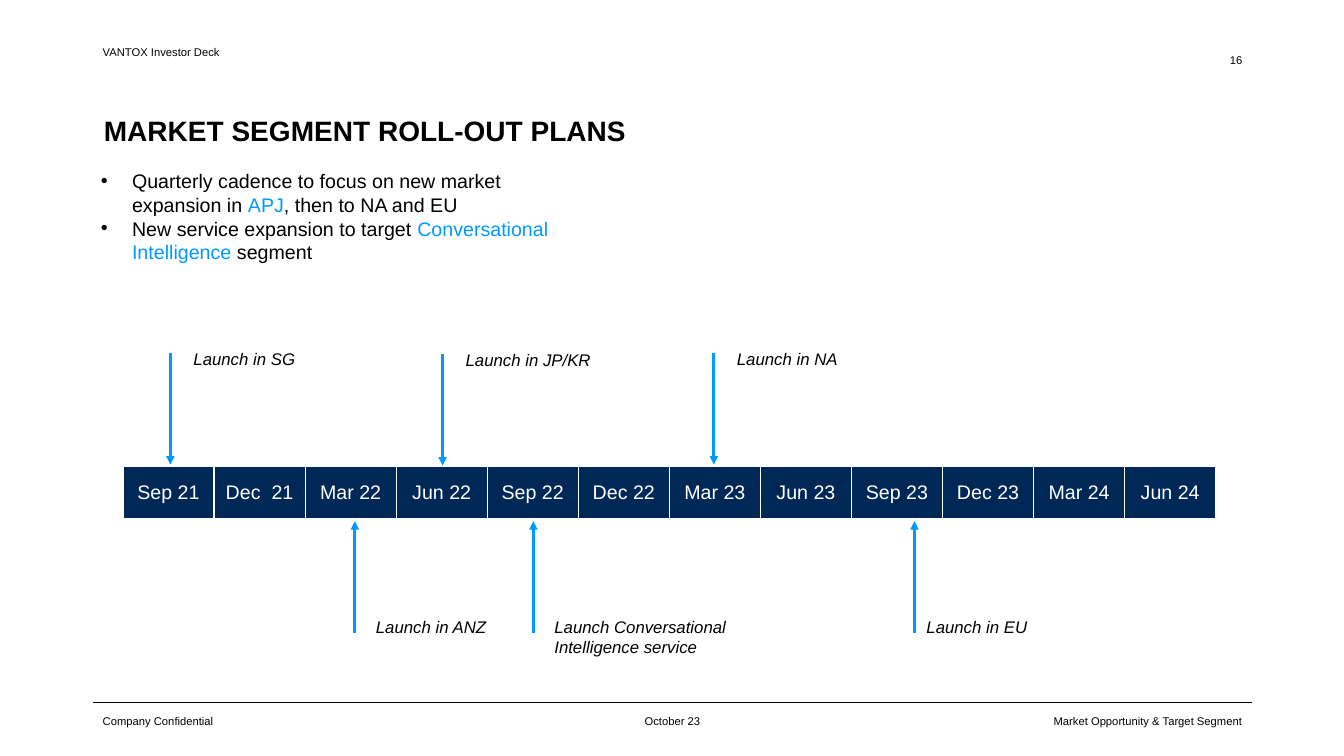
from lxml import etree
from pptx import Presentation
from pptx.dml.color import RGBColor
from pptx.enum.shapes import MSO_CONNECTOR
from pptx.enum.text import MSO_ANCHOR, MSO_AUTO_SIZE, PP_ALIGN
from pptx.oxml.ns import qn
from pptx.util import Inches, Pt

STRAIGHT = MSO_CONNECTOR.STRAIGHT
TOP, MIDDLE = MSO_ANCHOR.TOP, MSO_ANCHOR.MIDDLE
LEFT, CENTER, RIGHT = PP_ALIGN.LEFT, PP_ALIGN.CENTER, PP_ALIGN.RIGHT
COLORS = {"black": "000000", "white": "FFFFFF", "navy": "002856", "blue": "0099FF"}

deck = Presentation()
deck.slide_width, deck.slide_height = Inches(13.33), Inches(7.5)
page = deck.slides.add_slide(deck.slide_layouts[1])


def style_span(span, size, color="black", bold=False, italic=False):
    span.font.name = "Arial"
    span.font.size = Pt(size)
    span.font.bold = bold
    span.font.italic = italic
    span.font.color.rgb = RGBColor.from_string(COLORS[color])


def add_line(x1, y1, x2, y2, color, width):
    line = page.shapes.add_connector(STRAIGHT, Inches(x1), Inches(y1), Inches(x2), Inches(y2))
    line.line.color.rgb = RGBColor.from_string(COLORS[color])
    line.line.width = Pt(width)
    etree.SubElement(line._element.spPr, qn("a:effectLst"))
    return line


title = page.shapes.title
title.left, title.top, title.width, title.height = [Inches(n) for n in (0.93, 1.11, 5.82, 0.56)]
title.text_frame.text = "MARKET SEGMENT ROLL-OUT PLANS"
title.text_frame.vertical_anchor = TOP
title.text_frame.auto_size = MSO_AUTO_SIZE.NONE
title_para = title.text_frame.paragraphs[0]
title_para.alignment = LEFT
title_para.line_spacing = 0.9
title_para.space_before = Pt(10)
style_span(title_para.runs[0], 20, bold=True)

bullets = [
    [("Quarterly cadence to focus on new market expansion in ", "black"),
     ("APJ", "blue"), (", then to NA and EU", "black")],
    [("New service expansion to target ", "black"),
     ("Conversational Intelligence", "blue"), (" segment", "black")],
]
body = page.placeholders[1]
body.left, body.top, body.width, body.height = [Inches(n) for n in (0.9, 1.63, 4.88, 1.04)]
body.text_frame.auto_size = MSO_AUTO_SIZE.NONE
for index, pieces in enumerate(bullets):
    para = body.text_frame.paragraphs[0] if index == 0 else body.text_frame.add_paragraph()
    para.space_before = Pt(0)
    for words, color in pieces:
        span = para.add_run()
        span.text = words
        style_span(span, 14, color)
    properties = para._p.get_or_add_pPr()
    properties.set("marL", str(Inches(0.31)))
    properties.set("indent", str(-Inches(0.31)))
    bullet_color = etree.SubElement(properties, qn("a:buClr"))
    etree.SubElement(bullet_color, qn("a:srgbClr"), val=COLORS["black"])
    etree.SubElement(properties, qn("a:buFont"), typeface="Arial")
    etree.SubElement(properties, qn("a:buChar"), char="•")

margin_texts = [
    ("VANTOX Investor Deck", 0.92, 0.4, 2.66, LEFT, TOP),
    ("16", 9.42, 0.4, 3, RIGHT, MIDDLE),
    ("Company Confidential", 0.92, 6.95, 1.88, LEFT, MIDDLE),
    ("October 23", 5.17, 6.95, 3, CENTER, MIDDLE),
    ("Market Opportunity & Target Segment", 9.07, 6.95, 3.35, RIGHT, MIDDLE),
]
for words, left, top, width, alignment, anchor in margin_texts:
    box = page.shapes.add_textbox(Inches(left), Inches(top), Inches(width), Inches(0.4))
    box.text_frame.word_wrap = True
    box.text_frame.vertical_anchor = anchor
    box.text_frame.text = words
    para = box.text_frame.paragraphs[0]
    para.alignment = alignment
    style_span(para.runs[0], 8)
add_line(0.92, 6.97, 12.42, 6.97, "black", 0.5)

quarters = ["Sep 21", "Dec  21", "Mar 22", "Jun 22", "Sep 22", "Dec 22",
            "Mar 23", "Jun 23", "Sep 23", "Dec 23", "Mar 24", "Jun 24"]
timeline = page.shapes.add_table(1, len(quarters), Inches(1.22), Inches(4.63),
                                 Inches(10.84), Inches(0.52)).table
timeline.first_row = False
timeline.horz_banding = False
for cell, quarter in zip(timeline.iter_cells(), quarters):
    cell.text_frame.text = quarter
    cell.vertical_anchor = MIDDLE
    cell.margin_left = cell.margin_right = Inches(0.11)
    cell.margin_top = cell.margin_bottom = Inches(0.05)
    cell.fill.solid()
    cell.fill.fore_color.rgb = RGBColor.from_string(COLORS["navy"])
    para = cell.text_frame.paragraphs[0]
    para.alignment = CENTER
    style_span(para.runs[0], 14, "white")
    cell_properties = cell._tc.get_or_add_tcPr()
    for position, side in enumerate(("a:lnL", "a:lnR", "a:lnT", "a:lnB")):
        border = etree.Element(qn(side), w=str(Pt(1)))
        border_fill = etree.SubElement(border, qn("a:solidFill"))
        etree.SubElement(border_fill, qn("a:srgbClr"), val=COLORS["white"])
        cell_properties.insert(position, border)

launches = [
    ("Launch in SG", 1.69, 3.5, 4.61, 1.82, 3.46, 0.2),
    ("Launch in JP/KR", 4.39, 3.51, 4.62, 4.52, 3.47, 0.2),
    ("Launch in NA", 7.08, 3.5, 4.61, 7.21, 3.46, 0.2),
    ("Launch in ANZ", 3.52, 6.28, 5.17, 3.63, 6.12, 0.2),
    ("Launch Conversational Intelligence service", 5.29, 6.28, 5.17, 5.4, 6.12, 0.4),
    ("Launch in EU", 9.07, 6.28, 5.17, 9.09, 6.12, 0.2),
]
for words, x, start, end, left, top, height in launches:
    arrow = add_line(x, start, x, end, "blue", 2)
    etree.SubElement(arrow.line._get_or_add_ln(), qn("a:tailEnd"), type="triangle")
    label = page.shapes.add_textbox(Inches(left), Inches(top), Inches(2.22), Inches(height))
    frame = label.text_frame
    frame.word_wrap = True
    frame.margin_left = Inches(0.1)
    frame.margin_top = frame.margin_right = frame.margin_bottom = 0
    frame.text = words
    style_span(frame.paragraphs[0].runs[0], 12, italic=True)

deck.save("out.pptx")
